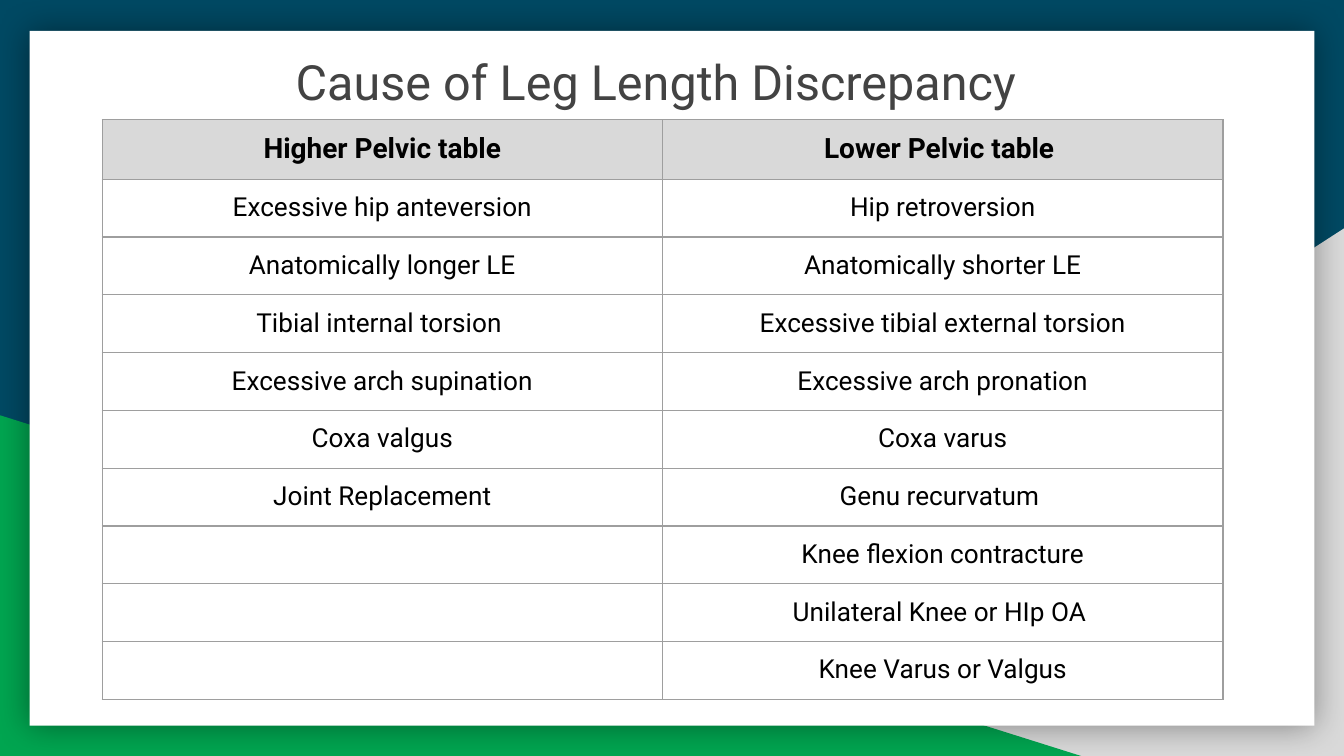
"""Build a slide with a table of causes of leg length discrepancy."""
import dataclasses

import pptx
import pptx.dml.color
import pptx.enum.shapes
import pptx.enum.text
import pptx.oxml
import pptx.oxml.ns
import pptx.util

Inches = pptx.util.Inches
Pt = pptx.util.Pt
SHAPE = pptx.enum.shapes.MSO_SHAPE
CENTER = pptx.enum.text.PP_ALIGN.CENTER


@dataclasses.dataclass(frozen=True)
class Theme:
    font: str = "Roboto"
    navy: str = "004963"
    green: str = "00A550"
    gray: str = "D9D9D9"
    white: str = "FFFFFF"
    black: str = "000000"
    title_color: str = "434343"
    border: str = "9E9E9E"
    border_width: float = 0.75
    title_size: int = 26
    header_size: int = 15
    body_size: int = 14


THEME = Theme()
HEADERS = ("Higher Pelvic table", "Lower Pelvic table ")
CAUSES = (
    ("Excessive hip anteversion", "Hip retroversion"),
    ("Anatomically longer LE", "Anatomically shorter LE"),
    ("Tibial internal torsion ", "Excessive tibial external torsion"),
    ("Excessive arch supination", "Excessive arch pronation"),
    ("Coxa valgus", "Coxa varus"),
    ("Joint Replacement", "Genu recurvatum "),
    ("", "Knee flexion contracture"),
    ("", "Unilateral Knee or HIp OA "),
    ("", "Knee Varus or Valgus"),
)


def rgb(value):
    return pptx.dml.color.RGBColor.from_string(value)


def parse_xml(xml):
    """Parse a DrawingML fragment whose root has a {ns} slot."""
    return pptx.oxml.parse_xml(xml.replace("{ns}", pptx.oxml.ns.nsdecls("a")))


def set_text(tf, text, color, **formats):
    p = tf.paragraphs[0]
    p.alignment = CENTER
    if not text:
        p._p.get_or_add_endParaRPr().set("sz", str(formats["size"].centipoints))
        return
    r = p.add_run()
    r.text = text
    r.font.color.rgb = rgb(color)
    for name, value in {"name": THEME.font, **formats}.items():
        setattr(r.font, name, value)


def set_margins(target, vertical):
    margins = {"left": Inches(0.1), "right": Inches(0.1), "top": vertical, "bottom": vertical}
    for side, value in margins.items():
        setattr(target, f"margin_{side}", value)


def add_panel(s, kind, box, color, flipped=False):
    sp = s.shapes.add_shape(kind, *map(Inches, box))
    sp.shadow.inherit = False
    sp.fill.solid()
    sp.fill.fore_color.rgb = rgb(color)
    sp.line.fill.background()
    if flipped:
        sp._element.spPr.get_or_add_xfrm().set("flipH", "1")
    return sp


def add_glow_shadow(sp):
    effects = sp._element.spPr.find(pptx.oxml.ns.qn("a:effectLst"))
    effects.append(parse_xml(
        f'<a:outerShdw {{ns}} blurRad="{Pt(18)}" dist="0" dir="0" algn="ctr" rotWithShape="0">'
        f'<a:srgbClr val="{THEME.black}"><a:alpha val="40000"/></a:srgbClr></a:outerShdw>'))


def add_title(s, text):
    sp = s.shapes.add_textbox(*map(Inches, (0.66, 0.29, 8.54, 0.97)))
    tf = sp.text_frame
    tf.word_wrap = True
    set_margins(tf, Inches(0.1))
    set_text(tf, text, THEME.title_color, size=Pt(THEME.title_size))


def set_borders(cell):
    tcPr = cell._tc.get_or_add_tcPr()
    for side in "LRTB":
        tcPr.append(parse_xml(
            f'<a:ln{side} {{ns}} w="{Pt(THEME.border_width)}"><a:solidFill>'
            f'<a:srgbClr val="{THEME.border}"/></a:solidFill></a:ln{side}>'))


def format_cell(cell, text, header):
    set_margins(cell, Pt(7))
    set_borders(cell)
    if header:
        cell.fill.solid()
        cell.fill.fore_color.rgb = rgb(THEME.gray)
    else:
        cell.fill.background()
    size = THEME.header_size if header else THEME.body_size
    set_text(cell.text_frame, text, THEME.black, size=Pt(size), bold=header)


def add_cause_table(s):
    rows = (HEADERS, *CAUSES)
    frame = s.shapes.add_table(len(rows), len(HEADERS), Inches(0.76), Inches(0.89),
                               Inches(8.34), Inches(0.43 * len(rows)))
    table = frame.table
    table.first_row = table.horz_banding = False
    for i, row in enumerate(rows):
        for j, text in enumerate(row):
            format_cell(table.cell(i, j), text, header=i == 0)


def main():
    prs = pptx.Presentation()
    prs.slide_width = Inches(10)
    prs.slide_height = prs.slide_width * 9 // 16
    s = prs.slides.add_slide(prs.slide_layouts[6])
    s.background.fill.solid()
    s.background.fill.fore_color.rgb = rgb(THEME.navy)
    add_panel(s, SHAPE.RIGHT_TRIANGLE, (3.92, 1.7, 6.08, 3.93), THEME.gray, flipped=True)
    add_panel(s, SHAPE.RIGHT_TRIANGLE, (0, 3.09, 8.06, 2.54), THEME.green)
    add_glow_shadow(add_panel(s, SHAPE.RECTANGLE, (0.22, 0.23, 9.56, 5.17), THEME.white))
    add_title(s, "Cause of Leg Length Discrepancy ")
    add_cause_table(s)
    prs.save("out.pptx")


if __name__ == "__main__":
    main()
